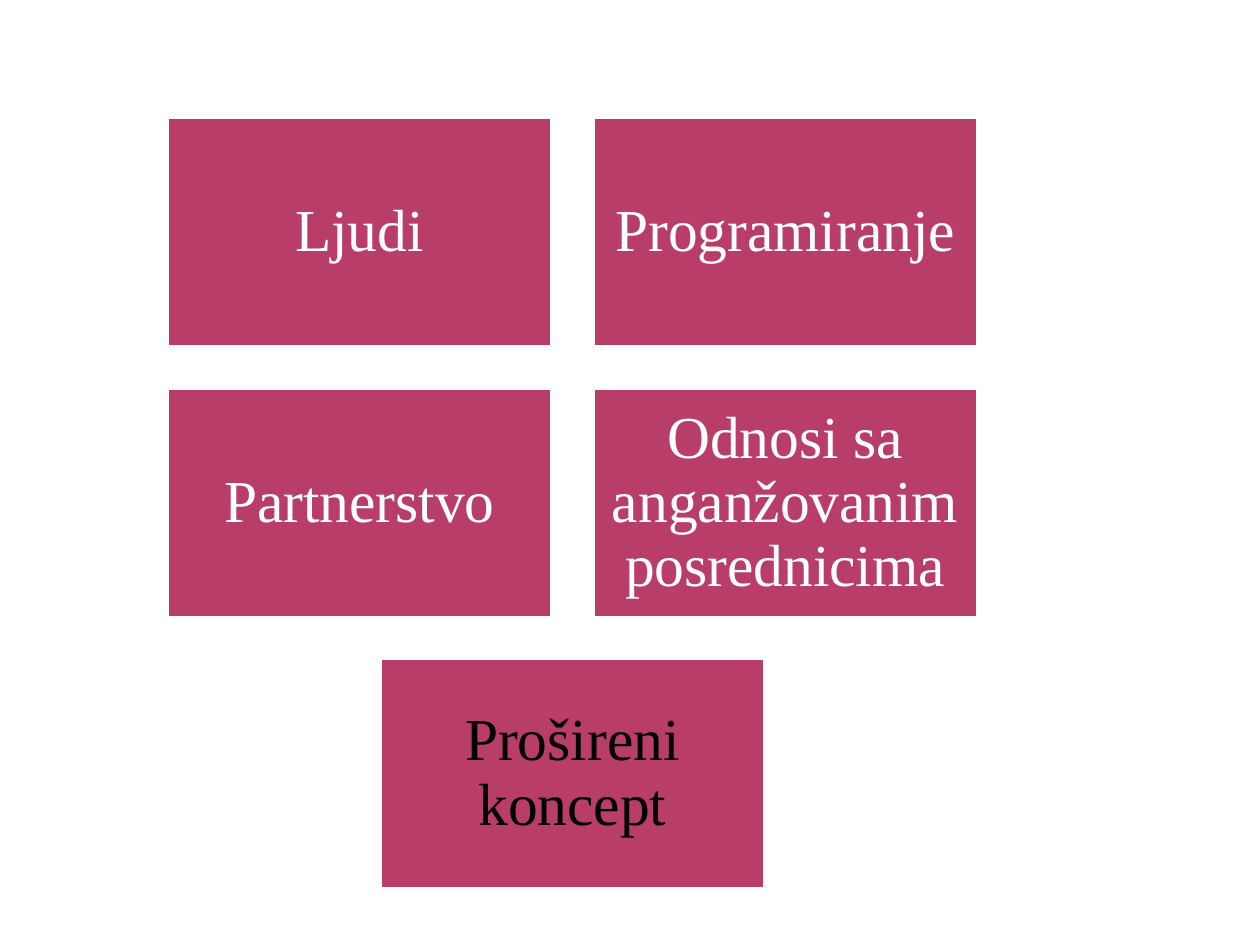
from dataclasses import dataclass

from pptx import Presentation
from pptx import util as u
from pptx.dml import color
from pptx.enum import shapes, text


@dataclass(frozen=True)
class Theme:
    """Colours and type of the slide."""
    tile: color.RGBColor = color.RGBColor.from_string("B83D68")
    light: color.RGBColor = color.RGBColor.from_string("FFFFFF")
    dark: color.RGBColor = color.RGBColor.from_string("000000")
    font: str = "Times New Roman"
    size: u.Pt = u.Pt(34)
    border: u.Pt = u.Pt(3.15)


THEME = Theme()
ROWS = [
    [("Ljudi", THEME.light), ("Programiranje", THEME.light)],
    [("Partnerstvo", THEME.light),
     ("Odnosi sa anganžovanim posrednicima", THEME.light)],
    [("Prošireni koncept", THEME.dark)],
]


def add_tile(group, left, top, width, height, label, ink):
    """Place one bordered tile with a centred label."""
    box = group.shapes.add_shape(
        shapes.MSO_SHAPE.RECTANGLE, left, top, width, height)
    box.shadow.inherit = False
    box.fill.solid()
    box.fill.fore_color.rgb = THEME.tile
    box.line.color.rgb = THEME.light
    box.line.width = THEME.border
    frame = box.text_frame
    frame.word_wrap = True
    frame.vertical_anchor = text.MSO_ANCHOR.MIDDLE
    frame.margin_left = frame.margin_right = u.Cm(0.36)
    frame.margin_top = frame.margin_bottom = u.Cm(0.36)
    para = frame.paragraphs[0]
    para.alignment = text.PP_ALIGN.CENTER
    para.line_spacing = 0.9
    span = para.add_run()
    span.text = label
    span.font.name = THEME.font
    span.font.size = THEME.size
    span.font.color.rgb = ink


def add_tile_grid(page, left, top, width, height, rows):
    """Fill a box with rows of equal tiles, each row centred."""
    gap = u.Cm(0.78)
    columns = max(len(row) for row in rows)
    tile_width = (width - gap * (columns - 1)) // columns
    tile_height = (height - gap * (len(rows) - 1)) // len(rows)
    group = page.shapes.add_group_shape()
    for index, row in enumerate(rows):
        row_width = len(row) * (tile_width + gap) - gap
        row_left = left + (width - row_width) // 2
        for column, (label, ink) in enumerate(row):
            add_tile(group, row_left + column * (tile_width + gap),
                     top + index * (tile_height + gap),
                     tile_width, tile_height, label, ink)


def main():
    """Build and save the slide."""
    deck = Presentation()
    deck.slide_width, deck.slide_height = u.Cm(25.4), u.Cm(19.05)
    page = deck.slides.add_slide(deck.slide_layouts[6])
    add_tile_grid(page, u.Cm(3.35), u.Cm(2.34), u.Cm(16.38), u.Cm(15.6), ROWS)
    deck.save("out.pptx")


if __name__ == "__main__":
    main()
